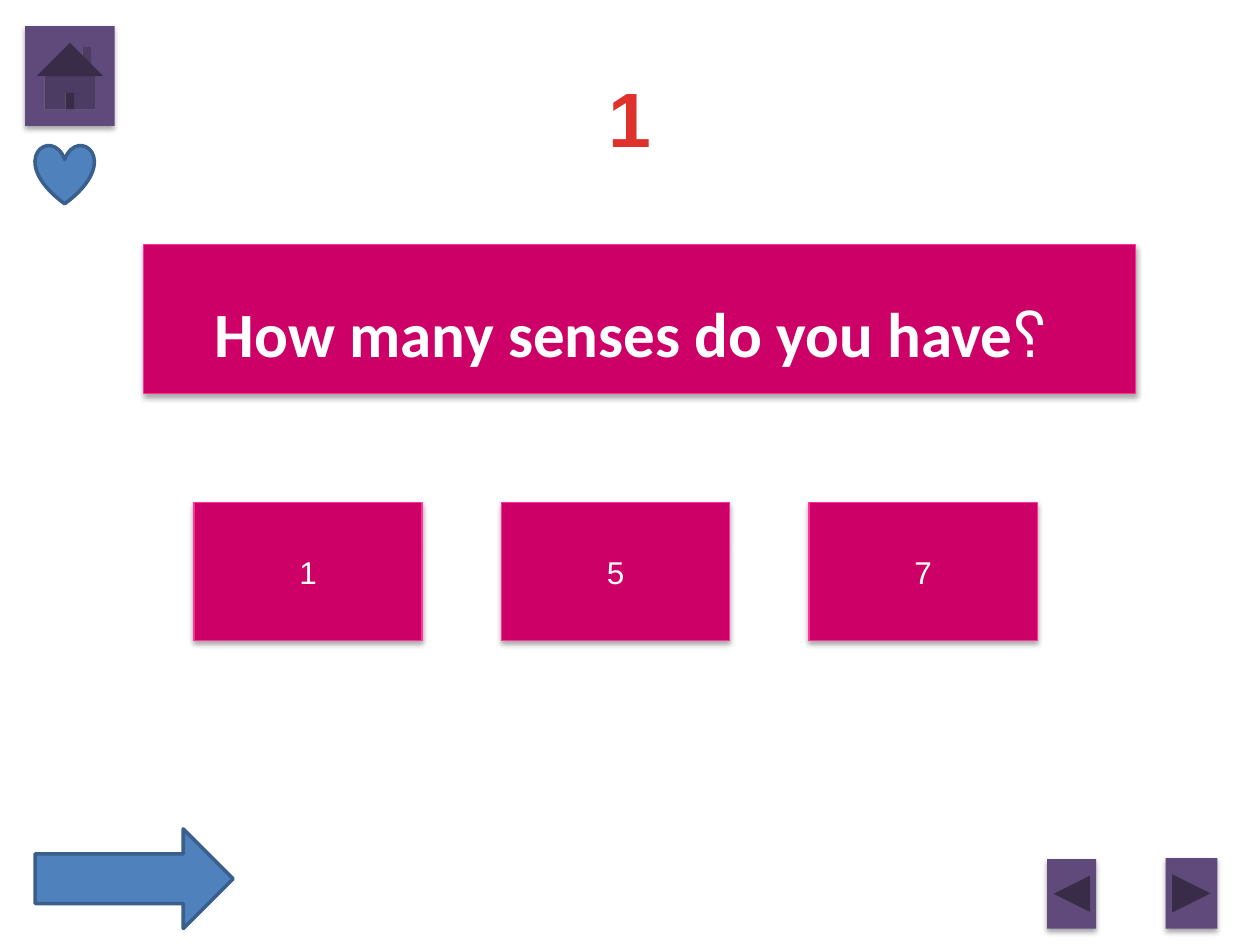
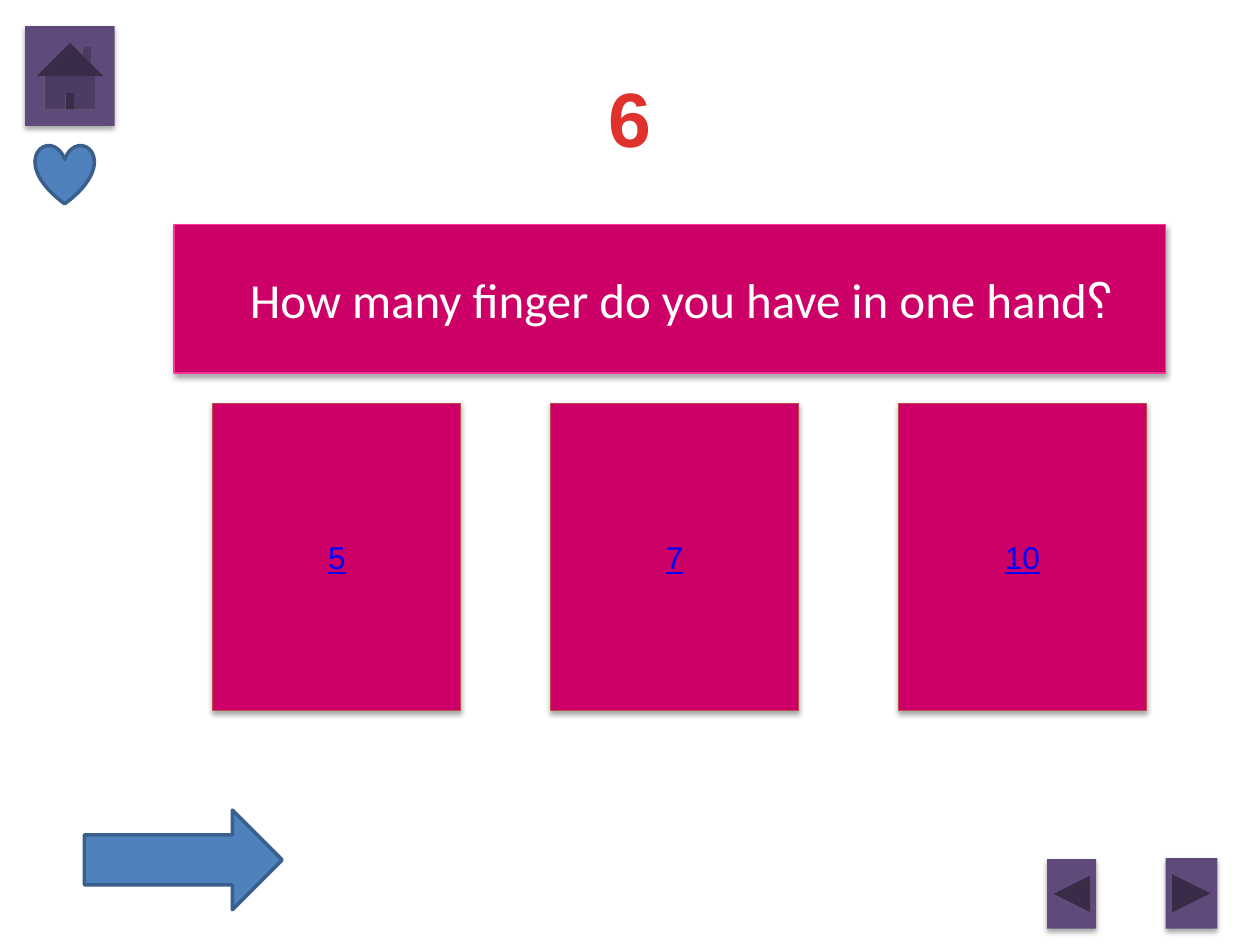
from lxml import etree
from pptx import Presentation
from pptx.dml.color import RGBColor
from pptx.enum.shapes import MSO_SHAPE
from pptx.enum.text import MSO_ANCHOR, PP_ALIGN
from pptx.oxml.ns import qn
from pptx.util import Cm, Pt

RECTANGLE = MSO_SHAPE.RECTANGLE
RIGHT_ARROW = MSO_SHAPE.RIGHT_ARROW
HEART = MSO_SHAPE.HEART
HOME = MSO_SHAPE.ACTION_BUTTON_HOME
BACK = MSO_SHAPE.ACTION_BUTTON_BACK_OR_PREVIOUS
FORWARD = MSO_SHAPE.ACTION_BUTTON_FORWARD_OR_NEXT
CENTER, RIGHT = PP_ALIGN.CENTER, PP_ALIGN.RIGHT
MIDDLE = MSO_ANCHOR.MIDDLE

COLORS = {
    "title": "E0322D", "card": "CC0066", "card_line": "FF3399",
    "link_line": "BF4C48", "link": "0000FF", "text": "FFFFFF",
    "blue": "4F81BD", "blue_line": "3A5F8C", "button": "604A7B",
    "shadow": "000000",
}

# Content: boxes are left, top, width, height in cm
QUESTIONS = [
    {
        "number": "1",
        "question": "؟How many senses do you have",
        "banner": (2.9, 4.93, 19.99, 3),
        "question_box": (1.3, 5.79, 22.86, 1.8),
        "question_format": {"size": Pt(36), "bold": True},
        "question_script": "Arial",
        "align": CENTER,
        "margin_right": 0.25,
        "answers": ["1", "5", "7"],
        "answer_lefts": [3.91, 10.11, 16.31],
        "answer_size": (10.13, 4.6, 2.79),
        "answer_line": "card_line",
        "answer_color": "text",
        "answer_format": {"size": Pt(18)},
        "arrow": (0.71, 16.71, 3.99, 2.01),
    },
    {
        "number": "6",
        "question": "؟How many finger do you have in one hand",
        "banner": (3.51, 4.52, 19.99, 3),
        "question_box": (3.51, 4.52, 19.99, 3),
        "question_format": {"size": Pt(28)},
        "question_script": "Calibri",
        "align": RIGHT,
        "margin_right": 1.04,
        "answers": ["5", "7", "10"],
        "answer_lefts": [4.29, 11.1, 18.11],
        "answer_size": (8.13, 5, 6.2),
        "answer_line": "link_line",
        "answer_color": "link",
        "answer_format": {"size": Pt(18), "underline": True},
        "arrow": (1.7, 16.33, 3.99, 2.01),
    },
]
TITLE_BOX = (1.27, 0.76, 22.86, 3.18)
TITLE_FORMAT = {"size": Pt(44), "bold": True}
HEART_BOX = (0.71, 2.92, 1.19, 1.19)
BUTTONS = [
    (HOME, (0.51, 0.53, 1.8, 2.01)),
    (BACK, (21.11, 17.32, 0.99, 1.4)),
    (FORWARD, (23.5, 17.3, 1.04, 1.42)),
]


def rgb(name):
    return RGBColor.from_string(COLORS[name])


def add_shadow(shape):
    effects = shape._element.spPr.find(qn("a:effectLst"))
    shadow = etree.SubElement(effects, qn("a:outerShdw"), blurRad=str(Pt(3.1)),
                              dist=str(Pt(1.8)), dir="5400000", rotWithShape="0")
    color = etree.SubElement(shadow, qn("a:srgbClr"), val=COLORS["shadow"])
    etree.SubElement(color, qn("a:alpha"), val="35000")


def add_box(slide, kind, box, fill, line=None, line_width=0.75, shadow=True):
    shape = slide.shapes.add_shape(kind, *map(Cm, box))
    shape.shadow.inherit = False
    shape.fill.solid()
    shape.fill.fore_color.rgb = rgb(fill)
    if line:
        shape.line.color.rgb = rgb(line)
        shape.line.width = Pt(line_width)
    else:
        shape.line.fill.background()
    if shadow:
        add_shadow(shape)
    return shape


def write(shape, text, color, font_format, align=CENTER, script="Arial"):
    """Write one right-to-left paragraph, vertically centred."""
    frame = shape.text_frame
    frame.word_wrap = True
    frame.vertical_anchor = MIDDLE
    paragraph = frame.paragraphs[0]
    paragraph.alignment = align
    paragraph._p.get_or_add_pPr().set("rtl", "1")
    run = paragraph.add_run()
    run.text = text
    run.font.name = "Calibri"
    run.font.color.rgb = rgb(color)
    for name, value in font_format.items():
        setattr(run.font, name, value)
    etree.SubElement(run._r.get_or_add_rPr(), qn("a:cs"), typeface=script)


def add_navigation(slide, arrow_box):
    for kind, box in BUTTONS:
        add_box(slide, kind, box, "button")
    for kind, box in ((HEART, HEART_BOX), (RIGHT_ARROW, arrow_box)):
        add_box(slide, kind, box, "blue", "blue_line", 2, shadow=False)


def add_question_slide(presentation, item):
    slide = presentation.slides.add_slide(presentation.slide_layouts[6])

    # Question number
    title = slide.shapes.add_textbox(*map(Cm, TITLE_BOX))
    write(title, item["number"], "title", TITLE_FORMAT)

    # Question banner
    add_box(slide, RECTANGLE, item["banner"], "card", "card_line")
    question = slide.shapes.add_textbox(*map(Cm, item["question_box"]))
    question.text_frame.margin_right = Cm(item["margin_right"])
    write(question, item["question"], "text", item["question_format"],
          item["align"], item["question_script"])

    # Answer cards
    for left, answer in zip(item["answer_lefts"], item["answers"]):
        card = add_box(slide, RECTANGLE, (left, *item["answer_size"]),
                       "card", item["answer_line"])
        write(card, answer, item["answer_color"], item["answer_format"])

    add_navigation(slide, item["arrow"])


def main():
    presentation = Presentation()
    presentation.slide_width = Cm(25.4)
    presentation.slide_height = Cm(19.05)
    for item in QUESTIONS:
        add_question_slide(presentation, item)
    presentation.save("out.pptx")


if __name__ == "__main__":
    main()
